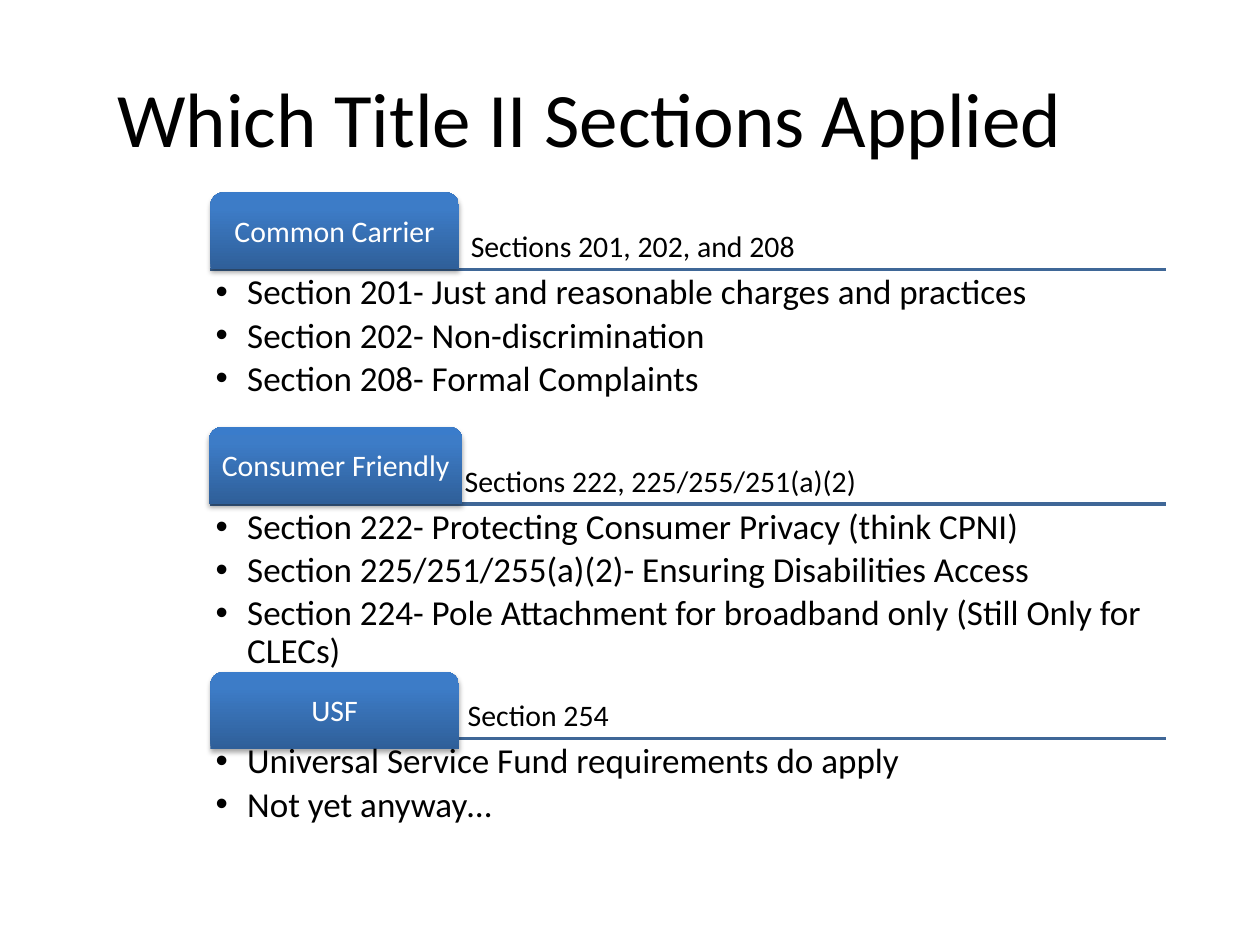
from copy import deepcopy

from pptx import Presentation
from pptx.dml.color import RGBColor
from pptx.enum.shapes import MSO_CONNECTOR, MSO_SHAPE
from pptx.enum.text import MSO_ANCHOR, PP_ALIGN
from pptx.oxml.ns import qn
from pptx.util import Pt
from lxml.etree import SubElement

TITLE = "Which Title II Sections Applied"
# tab: left, width and drop below the usual place; caption_left: text box edge
SECTIONS = [
    dict(name="Common Carrier", tab=(120.25, 142, 0),
         caption="Sections 201, 202, and 208", caption_left=266,
         points=["Section 201- Just and reasonable charges and practices",
                 "Section 202- Non-discrimination",
                 "Section 208- Formal Complaints"]),
    dict(name="Consumer Friendly ", tab=(119.5, 144.75, 0),
         caption="Sections 222, 225/255/251(a)(2)", caption_left=262.5,
         points=["Section 222- Protecting Consumer Privacy (think CPNI)",
                 "Section 225/251/255(a)(2)- Ensuring Disabilities Access",
                 "Section 224- Pole Attachment for broadband only "
                 "(Still Only for CLECs)"]),
    dict(name="USF", tab=(120.25, 142, 6),
         caption="Section 254", caption_left=264.25,
         points=["Universal Service Fund requirements do apply",
                 "Not yet anyway…"]),
]

FONT = "Calibri"
BLACK = RGBColor(0x00, 0x00, 0x00)
WHITE = RGBColor(0xFF, 0xFF, 0xFF)
RULE_BLUE = RGBColor(0x3F, 0x67, 0x97)
TAB_STOPS = [(0, RGBColor(0x2F, 0x5F, 0x99)),
             (0.8, RGBColor(0x3D, 0x7C, 0xC7)),
             (1, RGBColor(0x3A, 0x7C, 0xCB))]

LEFT, RIGHT = 120.25, 666
FIRST_RULE, PITCH = 154, 134
TAB_HEIGHT, BODY_HEIGHT = 44, 88
INSET = 3


def write(shape, lines, size, color=BLACK, anchor=MSO_ANCHOR.TOP,
          align=PP_ALIGN.LEFT, inset=INSET, spacing=0.9, bullets=False):
    frame = shape.text_frame
    frame.word_wrap = True
    frame.vertical_anchor = anchor
    frame.margin_left = frame.margin_right = Pt(inset)
    frame.margin_top = frame.margin_bottom = Pt(INSET)
    frame.text = "\n".join(lines)
    for para in frame.paragraphs:
        para.alignment = align
        para.line_spacing = spacing
        if bullets:
            para.space_after = Pt(3)
            props = para._p.get_or_add_pPr()
            props.set("marL", str(Pt(18)))
            props.set("indent", str(-Pt(18)))
            SubElement(props, qn("a:buFont"), typeface="Arial")
            SubElement(props, qn("a:buChar"), char="•")
        para.font.name = FONT
        para.font.size = Pt(size)
        para.font.color.rgb = color


def add_text(page, left, top, width, height, lines, size, **style):
    box = page.shapes.add_textbox(Pt(left), Pt(top), Pt(width), Pt(height))
    write(box, lines, size, **style)


def add_rule(page, y):
    rule = page.shapes.add_connector(
        MSO_CONNECTOR.STRAIGHT, Pt(LEFT), Pt(y), Pt(RIGHT), Pt(y))
    rule.line.color.rgb = RULE_BLUE
    rule.line.width = Pt(2)
    SubElement(rule._element.spPr, qn("a:effectLst"))


def add_tab(page, left, top, width, name):
    tab = page.shapes.add_shape(MSO_SHAPE.ROUND_2_SAME_RECTANGLE,
                                Pt(left), Pt(top), Pt(width), Pt(TAB_HEIGHT))
    tab.adjustments[0] = 0.167
    tab.adjustments[1] = 0
    tab.fill.gradient()
    tab.fill.gradient_angle = 90
    stops = tab._element.spPr.find(".//" + qn("a:gsLst"))
    stops.append(deepcopy(stops[0]))
    for stop, (position, color) in zip(tab.fill.gradient_stops, TAB_STOPS):
        stop.position = position
        stop.color.rgb = color
    tab.line.fill.background()
    tab.shadow.inherit = False
    effects = tab._element.spPr.find(qn("a:effectLst"))
    shadow = SubElement(effects, qn("a:outerShdw"), blurRad=str(Pt(3.1)),
                        dist=str(Pt(1.8)), dir="5400000", rotWithShape="0")
    shade = SubElement(shadow, qn("a:srgbClr"), val=str(BLACK))
    SubElement(shade, qn("a:alpha"), val="35000")
    write(tab, [name], 17, color=WHITE, anchor=MSO_ANCHOR.MIDDLE,
          align=PP_ALIGN.CENTER, inset=5)


def main():
    deck = Presentation()
    deck.slide_width, deck.slide_height = Pt(720), Pt(540)
    page = deck.slides.add_slide(deck.slide_layouts[6])
    add_text(page, 60, 21.5, 636, 90, [TITLE], 44,
             anchor=MSO_ANCHOR.MIDDLE, inset=7.2, spacing=1)

    rules = [FIRST_RULE + PITCH * i for i in range(len(SECTIONS))]
    for y in rules:
        add_rule(page, y)
    for y, section in zip(rules, SECTIONS):
        top = y - TAB_HEIGHT
        left, width, drop = section["tab"]
        start = section["caption_left"]
        add_text(page, start, top, RIGHT - start, TAB_HEIGHT,
                 [section["caption"]], 17, anchor=MSO_ANCHOR.BOTTOM)
        add_tab(page, left, top + drop, width, section["name"])
        add_text(page, LEFT, y, RIGHT - LEFT, BODY_HEIGHT,
                 section["points"], 20, bullets=True)
    deck.save("out.pptx")


if __name__ == "__main__":
    main()
